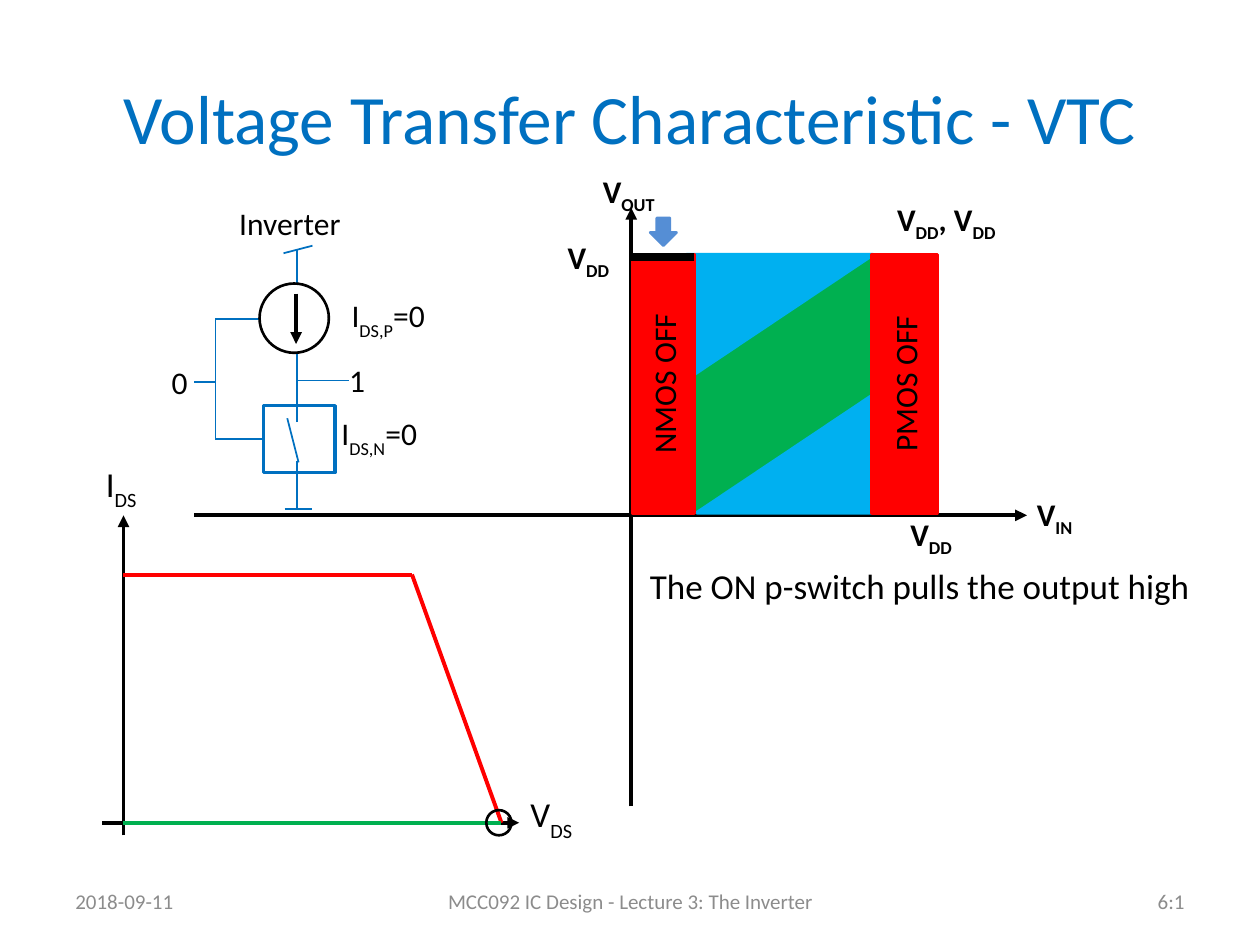
from dataclasses import dataclass

from lxml.etree import SubElement
from pptx import Presentation
from pptx.dml.color import RGBColor
from pptx.enum.shapes import MSO_CONNECTOR, MSO_SHAPE
from pptx.enum.text import MSO_ANCHOR, PP_ALIGN
from pptx.oxml.ns import qn
from pptx.util import Inches, Pt

COLUMNS, ROWS = 100, 75
WIDTH, HEIGHT = Inches(10), Inches(7.5)
BLACK, WHITE, GRAY = "000000", "FFFFFF", "8C8C8C"
BLUE, SKY, ARROW_BLUE = "0070C0", "00B0F0", "558ED5"
RED, GREEN = "FF0000", "00B050"
LEFT, CENTER, RIGHT = PP_ALIGN.LEFT, PP_ALIGN.CENTER, PP_ALIGN.RIGHT


@dataclass
class Label:
    text: str
    box: tuple
    size: float = 18
    bold: bool = False
    align: PP_ALIGN = CENTER
    color: str = BLACK
    anchor: MSO_ANCHOR = MSO_ANCHOR.TOP
    insets: tuple = (1, 0.5)
    subscript: int = -25
    wrap: bool = True


@dataclass
class Line:
    start: tuple
    end: tuple
    color: str = BLUE
    width: float = 1
    arrow: bool = False


@dataclass
class Block:
    kind: MSO_SHAPE
    box: tuple
    fill: str | None
    outline: str
    width: float
    text: str = ""


def column(value: float) -> int:
    return round(WIDTH * value / COLUMNS)


def row(value: float) -> int:
    return round(HEIGHT * value / ROWS)


def place(box: tuple) -> tuple:
    left, top, width, height = box
    return column(left), row(top), column(width), row(height)


def rgb(color: str) -> RGBColor:
    return RGBColor.from_string(color)


def apply(target, values: dict) -> None:
    for name, value in values.items():
        setattr(target, name, value)


def write(paragraph, text: str, size: float, color: str, bold=False, align=CENTER, subscript=-25) -> None:
    paragraph.alignment = align
    for index, part in enumerate(text.split("_")):
        if not part:
            continue
        run = paragraph.add_run()
        run.text = part
        apply(run.font, {"name": "Calibri", "size": Pt(size), "bold": bold})
        run.font.color.rgb = rgb(color)
        if index % 2:
            run._r.get_or_add_rPr().set("baseline", str(subscript * 1000))


def add_label(slide, label: Label):
    frame = slide.shapes.add_textbox(*place(label.box)).text_frame
    side, end = label.insets
    apply(frame, {
        "word_wrap": label.wrap, "vertical_anchor": label.anchor,
        "margin_left": column(side), "margin_right": column(side),
        "margin_top": row(end), "margin_bottom": row(end),
    })
    write(frame.paragraphs[0], label.text, label.size, label.color,
          label.bold, label.align, label.subscript)


def add_line(slide, line: Line):
    connector = slide.shapes.add_connector(
        MSO_CONNECTOR.STRAIGHT, column(line.start[0]), row(line.start[1]),
        column(line.end[0]), row(line.end[1]))
    connector.line.color.rgb = rgb(line.color)
    connector.line.width = Pt(line.width)
    properties = connector._element.spPr
    if line.arrow:
        SubElement(properties.find(qn("a:ln")), qn("a:tailEnd"), type="triangle")
    SubElement(properties, qn("a:effectLst"))
    return connector


def paint(shape, fill: str | None, outline: str, width: float) -> None:
    shape.shadow.inherit = False
    if fill:
        shape.fill.solid()
        shape.fill.fore_color.rgb = rgb(fill)
    else:
        shape.fill.background()
    shape.line.color.rgb = rgb(outline)
    shape.line.width = Pt(width)


def add_block(slide, block: Block):
    shape = slide.shapes.add_shape(block.kind, *place(block.box))
    paint(shape, block.fill, block.outline, block.width)
    if block.text:
        shape.text_frame._txBody.bodyPr.set("vert", "vert270")
        write(shape.text_frame.paragraphs[0], block.text, 18, BLACK)
    return shape


def add_triangle(slide, corners: list) -> None:
    points = [(column(x), row(y)) for x, y in corners]
    builder = slide.shapes.build_freeform(*points[0])
    builder.add_line_segments(points[1:], close=True)
    paint(builder.convert_to_shape(), SKY, SKY, 2)


def draw_inverter(slide) -> None:
    for line in (
        Line((23.6, 40.3), (23.6, 29.3)), Line((17.1, 25.3), (21.9, 25.3)),
        Line((23.6, 30.8), (23.6, 19.8)), Line((17.1, 34.9), (17.1, 25.3)),
        Line((15.4, 30.3), (17.1, 30.3)), Line((23.6, 30.2), (27.7, 30.2)),
        Line((22.6, 40.4), (24.8, 40.4)), Line((22.5, 20.1), (24.8, 19.5)),
    ):
        add_line(slide, line)
    switch = add_block(slide, Block(MSO_SHAPE.RECTANGLE, (20.9, 32.2, 5.7, 5.3), WHITE, BLUE, 2))
    add_line(slide, Line((17.1, 34.85), (20.9, 34.85))).end_connect(switch, 1)
    for line in (
        Line((23.6, 38.8), (23.6, 36.6)), Line((23.6, 33.5), (23.6, 31.3)),
        Line((23.7, 36.7), (22.8, 33.2)),
    ):
        add_line(slide, line)
    add_block(slide, Block(MSO_SHAPE.OVAL, (20.6, 22.5, 5.5, 5.5), WHITE, BLACK, 1.5))
    add_line(slide, Line((23.5, 23.3), (23.5, 27.3), BLACK, 2.25, True))


def draw_transfer_plot(slide) -> None:
    top, height = 20.2, 20.5
    bottom = top + height
    add_line(slide, Line((50.1, 64), (50.1, 16.5), BLACK, 2.25, True))
    add_line(slide, Line((15.4, 40.9), (81.5, 40.9), BLACK, 2.25, True))
    add_block(slide, Block(MSO_SHAPE.RECTANGLE, (54, top, 16.6, height), GREEN, GREEN, 1.5))
    add_triangle(slide, [(69.3, top), (54.5, 30.1), (54.5, top)])
    add_triangle(slide, [(55.3, bottom), (70.1, 30.8), (70.1, bottom)])
    for left, width, text in ((50.2, 4.9, "NMOS OFF"), (69.2, 5.2, "PMOS OFF")):
        add_block(slide, Block(MSO_SHAPE.RECTANGLE, (left, top, width, height), RED, RED, 2, text))
    add_line(slide, Line((55.1, 20.4), (49.9, 20.4), BLACK, 4.5))
    add_block(slide, Block(MSO_SHAPE.DOWN_ARROW, (51.6, 17.3, 2.1, 2.2), ARROW_BLUE, ARROW_BLUE, 1.5))


def draw_current_plot(slide) -> None:
    origin, knee, end = (9.8, 65.3), (32.7, 45.6), (39.8, 65.3)
    for line in (
        Line((9.8, 66.3), (9.8, 40.9), BLACK, 2.25, True),
        Line((8.1, 65.3), (41.2, 65.3), BLACK, 2.25, True),
        Line(knee, end, RED, 2.25), Line((9.8, 45.6), knee, RED, 2.25),
        Line(origin, end, GREEN, 2.25),
    ):
        add_line(slide, line)
    add_block(slide, Block(MSO_SHAPE.OVAL, (38.6, 64.3, 2, 2), None, BLACK, 1.5))


def add_labels(slide) -> None:
    footer = {"size": 12, "color": GRAY, "anchor": MSO_ANCHOR.MIDDLE}
    current = {"align": LEFT, "insets": (0.7, 0.3), "subscript": -30}
    axis = {**current, "size": 20, "insets": (0.6, 0.3)}
    for label in (
        Label("2018-09-11", (5, 69.5, 23.3, 4), align=LEFT, **footer),
        Label("MCC092 IC Design - Lecture 3: The Inverter", (34.2, 69.5, 31.7, 4), **footer),
        Label("6:1", (71.7, 69.5, 23.3, 4), align=RIGHT, **footer),
        Label("Inverter", (18, 15.7, 10.2, 4), align=LEFT, wrap=False),
        Label("0", (11.8, 28.3, 4.9, 4)),
        Label("1", (27.7, 28.2, 7.9, 4), align=LEFT, insets=(0, 0.5)),
        Label("I_DS,P_=0", (27.2, 23.2, 9.7, 5.7), **current),
        Label("I_DS,N_=0", (26.4, 32.6, 9.7, 5.7), **current),
        Label("V_DS", (41.5, 62.6, 7, 5.1), **axis),
        Label("I_DS", (7.8, 36.4, 6.4, 7.8), **axis),
        Label("V_IN", (80.4, 38.8, 6.6, 4), bold=True),
        Label("V_OUT", (45.8, 13.2, 8.2, 4), bold=True),
        Label("V_DD", (70.6, 40.4, 6.6, 4), bold=True),
        Label("V_DD", (43.4, 18.4, 6.6, 4), bold=True),
        Label("V_DD_, V_DD", (69, 15.4, 12.2, 4), bold=True),
        Label("The ON p-switch pulls the output high", (50.6, 44.3, 45.9, 22.3), size=20, align=LEFT),
    ):
        add_label(slide, label)


def main() -> None:
    presentation = Presentation()
    apply(presentation, {"slide_width": WIDTH, "slide_height": HEIGHT})
    slide = presentation.slides.add_slide(presentation.slide_layouts[5])
    title = slide.shapes.title
    apply(title, dict(zip(("left", "top", "width", "height"), place((5, 3, 90, 12.5)))))
    title.text_frame.vertical_anchor = MSO_ANCHOR.MIDDLE
    write(title.text_frame.paragraphs[0], "Voltage Transfer Characteristic - VTC", 39.6, BLUE)
    draw_inverter(slide)
    draw_transfer_plot(slide)
    draw_current_plot(slide)
    add_labels(slide)
    presentation.save("out.pptx")


if __name__ == "__main__":
    main()
